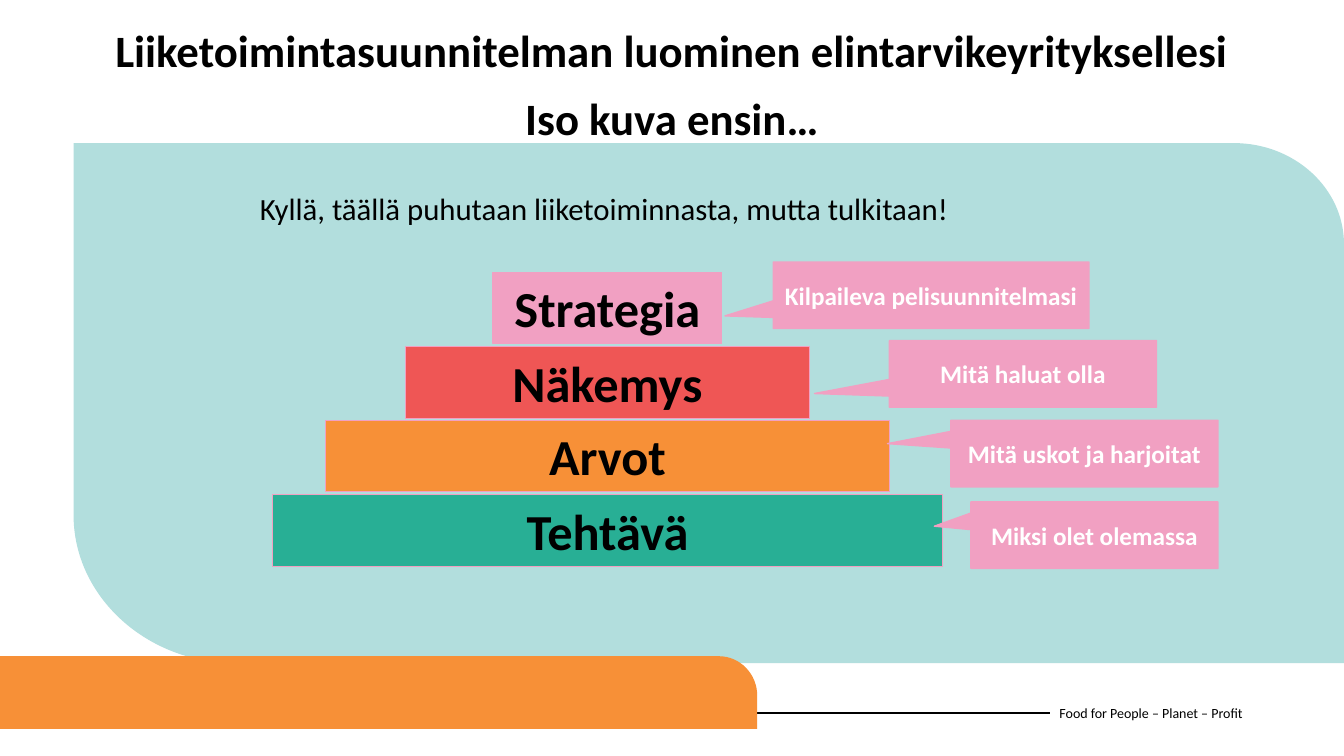
import pptx
import pptx.util
import pptx.dml.color
import pptx.enum.shapes
import pptx.enum.text
import pptx.oxml
import pptx.oxml.ns
import lxml.etree

Inches = pptx.util.Inches
Shapes = pptx.enum.shapes.MSO_SHAPE
Anchor = pptx.enum.text.MSO_ANCHOR
Align = pptx.enum.text.PP_ALIGN
Fit = pptx.enum.text.MSO_AUTO_SIZE
qn = pptx.oxml.ns.qn
PINK, ORANGE = "F1A0C2", "F79037"
CURVE = 0.55
BANDS = [
    ("Strategia", 2.27, PINK),
    ("Näkemys", 4, "EF5655"),
    ("Arvot", 5.59, ORANGE),
    ("Tehtävä", 6.65, "28AF95"),
]
CALLOUTS = [
    ("Kilpaileva pelisuunnitelmasi", 7.67, 2.6, 3.13, (-0.653, 0.31)),
    ("Mitä haluat olla", 8.82, 3.38, 2.65, (-0.78, 0.295)),
    ("Mitä uskot ja harjoitat", 9.43, 4.17, 2.65, (-0.737, -0.149)),
    ("Miksi olet olemassa", 9.63, 4.98, 2.45, (-0.648, -0.135)),
]


def color(value):
    return pptx.dml.color.RGBColor.from_string(value)


def paint(shape, fill, line=None, width=1):
    shape.shadow.inherit = False
    shape.fill.solid()
    shape.fill.fore_color.rgb = color(fill)
    if line:
        shape.line.color.rgb = color(line)
        shape.line.width = pptx.util.Pt(width)
    else:
        shape.line.fill.background()


def write(shape, lines, size, ink="000000", bold=False, align=Align.LEFT,
          anchor=Anchor.TOP, before=0, fit=Fit.NONE):
    frame = shape.text_frame
    frame.word_wrap = True
    frame.auto_size = fit
    frame.vertical_anchor = anchor
    frame.text = "\n".join(lines)
    for para in frame.paragraphs:
        para.alignment = align
        para.space_before = pptx.util.Pt(before)
        for span in para.runs:
            span.font.name = "Calibri"
            span.font.size = pptx.util.Pt(size)
            span.font.bold = bold
            span.font.color.rgb = color(ink)


def add_text(page, box, lines, size, **style):
    shape = page.shapes.add_textbox(*map(Inches, box))
    write(shape, lines, size, **style)


def add_block(page, kind, box, fill, line_width):
    shape = page.shapes.add_shape(kind, *map(Inches, box))
    paint(shape, fill, PINK, line_width)
    return shape


def bend(segment, start, corner, end):
    segment.tag = qn("a:cubicBezTo")
    controls = [[tip + CURVE * (middle - tip) for tip, middle in zip(point, corner)]
                for point in (start, end)]
    for index, (x, y) in enumerate(controls):
        point = lxml.etree.Element(qn("a:pt"), x=str(Inches(x)), y=str(Inches(y)))
        segment.insert(index, point)


def add_rounded_panel(page, box, fill, top_right, bottom_left=(0, 0)):
    left, top, width, height = box
    right_x, right_y = top_right
    left_x, left_y = bottom_left
    points = [(0, 0), (width - right_x, 0), (width, right_y), (width, height),
              (left_x, height)]
    curves = {1: (width, 0)}
    if left_x:
        points.append((0, height - left_y))
        curves[4] = (0, height)
    corners = [(Inches(left + x), Inches(top + y)) for x, y in points]
    builder = page.shapes.build_freeform(*corners[0])
    builder.add_line_segments(corners[1:], close=True)
    panel = builder.convert_to_shape()
    segments = list(panel._element.iter(qn("a:lnTo")))
    for index, corner in curves.items():
        bend(segments[index], points[index], corner, points[index + 1])
    paint(panel, fill)


def add_background(page, width):
    add_text(page, (10.41, 6.87, 2.73, 0.4), ["Food for People – Planet – Profit"], 10,
             anchor=Anchor.MIDDLE)
    rule = page.shapes.add_connector(pptx.enum.shapes.MSO_CONNECTOR.STRAIGHT,
                                     0, Inches(7.07), Inches(10.41), Inches(7.07))
    rule.line.color.rgb = color("000000")
    rule.line.width = pptx.util.Pt(1.5)
    rule._element.spPr.append(pptx.oxml.parse_xml(
        '<a:effectLst xmlns:a="http://schemas.openxmlformats.org/drawingml/2006/main"/>'))
    add_rounded_panel(page, (0.73, 1.42, width - 0.73, 5.16), "B2DEDD", (1.09, 1), (1.61, 1.47))
    add_rounded_panel(page, (0, 6.51, 7.51, 0.72), ORANGE, (0.38, 0.39))


def add_pyramid(page, box):
    left, top, width, height = box
    band_height = 0.71
    pitch = (height - band_height) / (len(BANDS) - 1)
    for row, (label, band_width, fill) in enumerate(BANDS):
        place = (left + (width - band_width) / 2, round(top + row * pitch, 2),
                 band_width, band_height)
        band = add_block(page, Shapes.RECTANGLE, place, fill, 0.75)
        write(band, [label], 36, bold=True, align=Align.CENTER, fit=Fit.SHAPE_TO_FIT_TEXT)


def add_callouts(page):
    for label, left, top, width, pointer in CALLOUTS:
        callout = add_block(page, Shapes.RECTANGULAR_CALLOUT, (left, top, width, 0.66), PINK, 1)
        for index, value in enumerate(pointer):
            callout.adjustments[index] = value
        write(callout, [label], 18, ink="FFFFFF", bold=True, align=Align.CENTER,
              anchor=Anchor.MIDDLE)


def main():
    deck = pptx.Presentation()
    deck.slide_width, deck.slide_height = Inches(13.33), Inches(7.5)
    page = deck.slides.add_slide(deck.slide_layouts[6])
    add_background(page, 13.33)
    add_text(page, (-0.26, 0.18, 13.85, 0.88),
             ["Liiketoimintasuunnitelman luominen elintarvikeyrityksellesi", "Iso kuva ensin…"],
             32, bold=True, align=Align.CENTER, before=10)
    add_text(page, (2.48, 1.83, 10.39, 0.47),
             ["Kyllä, täällä puhutaan liiketoiminnasta, mutta tulkitaan!"], 22,
             fit=Fit.SHAPE_TO_FIT_TEXT)
    add_pyramid(page, (2.7, 2.7, 6.65, 2.92))
    add_callouts(page)
    deck.save("out.pptx")


if __name__ == "__main__":
    main()
